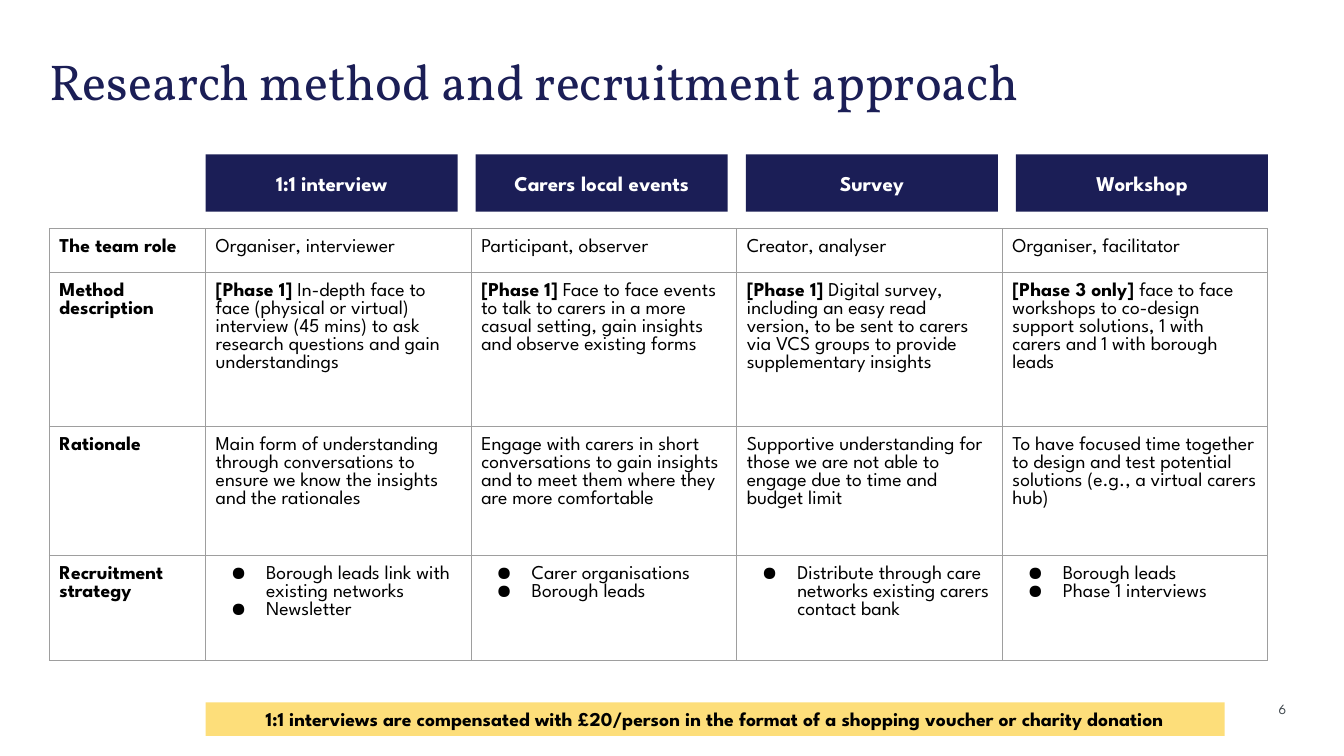
from dataclasses import dataclass

from lxml import etree
from pptx import Presentation
from pptx.dml.color import RGBColor
from pptx.enum.shapes import MSO_SHAPE
from pptx.enum.text import MSO_ANCHOR, PP_ALIGN
from pptx.oxml.ns import qn
from pptx.util import Pt

RECT = MSO_SHAPE.RECTANGLE
TOP, MIDDLE = MSO_ANCHOR.TOP, MSO_ANCHOR.MIDDLE
LEFT, CENTER, RIGHT = PP_ALIGN.LEFT, PP_ALIGN.CENTER, PP_ALIGN.RIGHT


@dataclass(frozen=True)
class Theme:
    navy: str = "1B1E56"
    yellow: str = "FDDE7A"
    white: str = "FFFFFF"
    black: str = "000000"
    slate: str = "3D454B"
    rule: str = "9E9E9E"
    serif: str = "Vollkorn"
    sans: str = "League Spartan"
    title: int = 36
    head: int = 15
    body: int = 14
    small: int = 10
    pad: float = 7.2


THEME = Theme()

HEADS = ["1:1 interview", "Carers local events", "Survey", "Workshop"]
GRID = [
    ["The team role", "Organiser, interviewer", "Participant, observer",
     "Creator, analyser", "Organiser, facilitator"],
    ["Method description",
     "[Phase 1] In-depth face to face (physical or virtual) interview (45 mins) "
     "to ask research questions and gain understandings",
     "[Phase 1] Face to face events to talk to carers in a more casual setting, "
     "gain insights and observe existing forms",
     "[Phase 1] Digital survey, including an easy read version, to be sent to "
     "carers via VCS groups to provide supplementary insights",
     "[Phase 3 only] face to face workshops to co-design support solutions, "
     "1 with carers and 1 with borough leads"],
    ["Rationale",
     "Main form of understanding through conversations to ensure we know the "
     "insights and the rationales",
     "Engage with carers in short conversations to gain insights and to meet "
     "them where they are more comfortable",
     "Supportive understanding for those we are not able to engage due to time "
     "and budget limit",
     "To have focused time together to design and test potential solutions "
     "(e.g., a virtual carers hub)"],
    ["Recruitment strategy",
     ["Borough leads link with existing networks", "Newsletter"],
     ["Carer organisations", "Borough leads"],
     ["Distribute through care networks existing carers contact bank"],
     ["Borough leads", "Phase 1 interviews"]],
]
ROWS = [30.2, 109.8, 92.6, 74.9]
SIDE = 111.6
NOTE = ("1:1 interviews are compensated with £20/person in the format of "
        "a shopping voucher or charity donation")


def style(para, size, color, face=THEME.sans, bold=False, align=LEFT):
    para.alignment = align
    font = para.font
    font.size, font.name = Pt(size), face
    font.color.rgb = RGBColor.from_string(color)
    if bold is not None:
        font.bold = bold


def set_frame(frame, anchor, side, edge):
    frame.word_wrap = True
    frame.vertical_anchor = anchor
    frame.margin_left = frame.margin_right = Pt(side)
    frame.margin_top = frame.margin_bottom = Pt(edge)


def add_title(slide, box, text):
    frame = slide.shapes.add_textbox(*map(Pt, box)).text_frame
    set_frame(frame, TOP, 0, 0)
    para = frame.paragraphs[0]
    para.text = text
    para.line_spacing = 0.9
    style(para, THEME.title, THEME.navy, THEME.serif)


def add_number(slide, box, text):
    frame = slide.shapes.add_textbox(*map(Pt, box)).text_frame
    set_frame(frame, MIDDLE, THEME.pad, THEME.pad / 2)
    para = frame.paragraphs[0]
    para.text = text
    style(para, THEME.small, THEME.slate, align=RIGHT)


def add_band(slide, box, text, fill, color, size):
    band = slide.shapes.add_shape(RECT, *map(Pt, box))
    band.shadow.inherit = False
    band.fill.solid()
    band.fill.fore_color.rgb = RGBColor.from_string(fill)
    band.line.fill.background()
    set_frame(band.text_frame, MIDDLE, THEME.pad, THEME.pad)
    para = band.text_frame.paragraphs[0]
    para.text = text
    style(para, size, color, bold=True, align=CENTER)


def add_heads(slide, box, heads):
    left, top, width, height = box
    wide = 180
    step = (width - wide) / (len(heads) - 1)
    for i, head in enumerate(heads):
        add_band(slide, (left + i * step, top, wide, height), head,
                 THEME.navy, THEME.white, THEME.head)


def add_bullet(para):
    props = para._p.get_or_add_pPr()
    props.set("marL", str(Pt(36)))
    props.set("indent", str(Pt(-25.2)))
    tint = etree.SubElement(props, qn("a:buClr"))
    etree.SubElement(tint, qn("a:srgbClr"), val=THEME.black)
    etree.SubElement(props, qn("a:buChar"), char="●")


def add_border(cell):
    props = cell._tc.get_or_add_tcPr()
    for side in ("lnL", "lnR", "lnT", "lnB"):
        line = etree.SubElement(props, qn(f"a:{side}"), w=str(Pt(0.75)))
        fill = etree.SubElement(line, qn("a:solidFill"))
        etree.SubElement(fill, qn("a:srgbClr"), val=THEME.rule)


def fill_cell(cell, item, bold):
    add_border(cell)
    cell.fill.background()
    cell.margin_left = cell.margin_right = Pt(THEME.pad)
    cell.margin_top = cell.margin_bottom = Pt(THEME.pad)
    cell.vertical_anchor = TOP
    frame = cell.text_frame
    listed = isinstance(item, list)
    for i, text in enumerate(item if listed else [item]):
        para = frame.add_paragraph() if i else frame.paragraphs[0]
        if listed:
            add_bullet(para)
        lead, mark, rest = text.partition("]")
        if mark:
            for part, heavy in ((lead + mark, True), (rest, False)):
                run = para.add_run()
                run.text, run.font.bold = part, heavy
        else:
            para.add_run().text = text
        style(para, THEME.body, THEME.black, bold=None if mark else bold)
        etree.SubElement(para._p, qn("a:endParaRPr"), sz=str(THEME.body * 100))


def add_grid(slide, box, grid):
    width = box[2]
    cols = len(grid[0])
    table = slide.shapes.add_table(len(grid), cols, *map(Pt, box)).table
    table.first_row = table.horz_banding = False
    for i, col in enumerate(table.columns):
        col.width = Pt((width - SIDE) / (cols - 1) if i else SIDE)
    for row, high, items in zip(table.rows, ROWS, grid):
        row.height = Pt(high)
        for i, (cell, item) in enumerate(zip(row.cells, items)):
            fill_cell(cell, item, i == 0)


def build_slide(deck):
    slide = deck.slides.add_slide(deck.slide_layouts[6])
    left, width = 35.3, 870.4
    inner = left + SIDE
    add_title(slide, (left, 40.8, 884, 85.7), "Research method and recruitment approach")
    add_number(slide, (883.4, 496.8, 42.5, 19.4), "6")
    add_heads(slide, (inner, 110.2, width - SIDE, 41), HEADS)
    add_grid(slide, (left, 163.4, width, sum(ROWS)), GRID)
    add_band(slide, (inner, 501.8, 728, 23.8), NOTE,
             THEME.yellow, THEME.black, THEME.body)


def main():
    deck = Presentation()
    deck.slide_width, deck.slide_height = Pt(960), Pt(540)
    build_slide(deck)
    deck.save("out.pptx")


if __name__ == "__main__":
    main()
